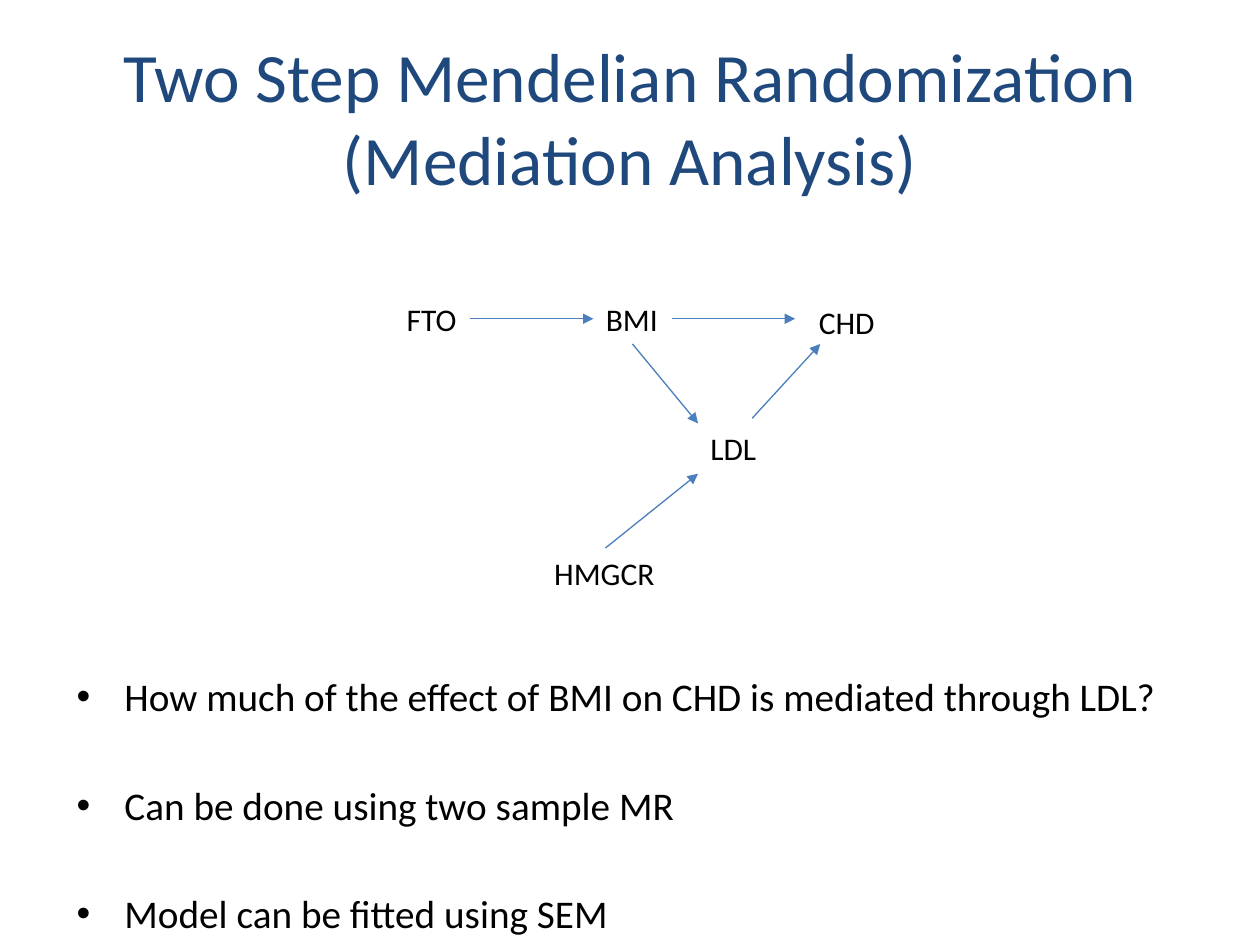
import pptx
import pptx.util
import pptx.dml.color
import pptx.enum.shapes
import pptx.enum.text
import pptx.oxml
import pptx.oxml.ns
from pptx.util import Inches

FONT = "Calibri"
COLORS = {"title": "1F497D", "text": "000000", "arrow": "4B7EBC"}
TOP, LEFT, BOTTOM, RIGHT = range(4)

# Variables of the causal diagram: left, top, width
VARIABLES = {
    "FTO": (3.13, 2.33, 0.6),
    "BMI": (4.71, 2.33, 0.62),
    "LDL": (5.54, 3.36, 0.57),
    "CHD": (6.4, 2.36, 0.65),
    "HMGCR": (4.3, 4.35, 1.01),
}

# Effects: start point, end point, (variable, side) joined at each end
EFFECTS = [
    ((3.73, 2.53), (4.71, 2.53), ("FTO", RIGHT), ("BMI", LEFT)),
    ((5.33, 2.53), (6.31, 2.53), ("BMI", RIGHT), None),
    ((5.02, 2.73), (5.54, 3.36), ("BMI", BOTTOM), None),
    ((5.97, 3.32), (6.51, 2.73), None, None),
    ((4.81, 4.35), (5.54, 3.76), ("HMGCR", TOP), None),
]

BULLETS = [
    "How much of the effect of BMI on CHD is mediated through LDL?",
    "Can be done using two sample MR",
    "Model can be fitted using SEM",
]


def rgb(name):
    return pptx.dml.color.RGBColor.from_string(COLORS[name])


def add_xml(parent, tag, **attributes):
    element = pptx.oxml.parse_xml(f"<a:{tag} {pptx.oxml.ns.nsdecls('a')}/>")
    for name, value in attributes.items():
        element.set(name, value)
    parent.append(element)


def add_bullet(paragraph, indent=0.38):
    properties = paragraph._p.get_or_add_pPr()
    properties.set("marL", str(Inches(indent)))
    properties.set("indent", str(-Inches(indent)))
    add_xml(properties, "buFont", typeface="Arial")
    add_xml(properties, "buChar", char="•")


def add_text(slide, box, paragraphs, size=18, color="text", align="LEFT",
             anchor="TOP", wrap=True, bullet=False, gap=0):
    shape = slide.shapes.add_textbox(*map(Inches, box))
    frame = shape.text_frame
    frame.word_wrap = wrap
    frame.vertical_anchor = getattr(pptx.enum.text.MSO_ANCHOR, anchor)
    if not wrap:
        frame.auto_size = pptx.enum.text.MSO_AUTO_SIZE.SHAPE_TO_FIT_TEXT
    for index, text in enumerate(paragraphs):
        paragraph = frame.add_paragraph() if index else frame.paragraphs[0]
        paragraph.text = text
        paragraph.alignment = getattr(pptx.enum.text.PP_ALIGN, align)
        if index and gap:
            paragraph.space_before = pptx.util.Pt(gap)
        if bullet:
            add_bullet(paragraph)
        for run in paragraph.runs:
            run.font.name = FONT
            run.font.size = pptx.util.Pt(size)
            run.font.color.rgb = rgb(color)
    return shape


def add_arrow(slide, start, end, source=None, target=None):
    connector = slide.shapes.add_connector(
        pptx.enum.shapes.MSO_CONNECTOR.STRAIGHT, *map(Inches, start + end))
    if source:
        connector.begin_connect(*source)
    if target:
        connector.end_connect(*target)
    connector.line.width = pptx.util.Pt(0.75)
    connector.line.color.rgb = rgb("arrow")
    add_xml(connector.line._get_or_add_ln(), "tailEnd", type="triangle")
    add_xml(connector._element.spPr, "effectLst")


def main():
    presentation = pptx.Presentation()
    presentation.slide_width = Inches(10)
    presentation.slide_height = Inches(7.5)
    slide = presentation.slides.add_slide(presentation.slide_layouts[6])

    # Title
    add_text(slide, (0.5, 0.3, 9, 1.25),
             ["Two Step Mendelian Randomization\v(Mediation Analysis)"],
             size=39.6, color="title", align="CENTER", anchor="MIDDLE")

    # Causal diagram
    labels = {
        name: add_text(slide, (left, top, width, 0.4), [name], wrap=False)
        for name, (left, top, width) in VARIABLES.items()
    }
    for start, end, *joints in EFFECTS:
        source, target = [
            joint and (labels[joint[0]], joint[1]) for joint in joints]
        add_arrow(slide, start, end, source, target)

    # Discussion points
    add_text(slide, (0.51, 5.29, 9, 2), BULLETS, size=22.4, bullet=True, gap=35)

    presentation.save("out.pptx")


if __name__ == "__main__":
    main()
